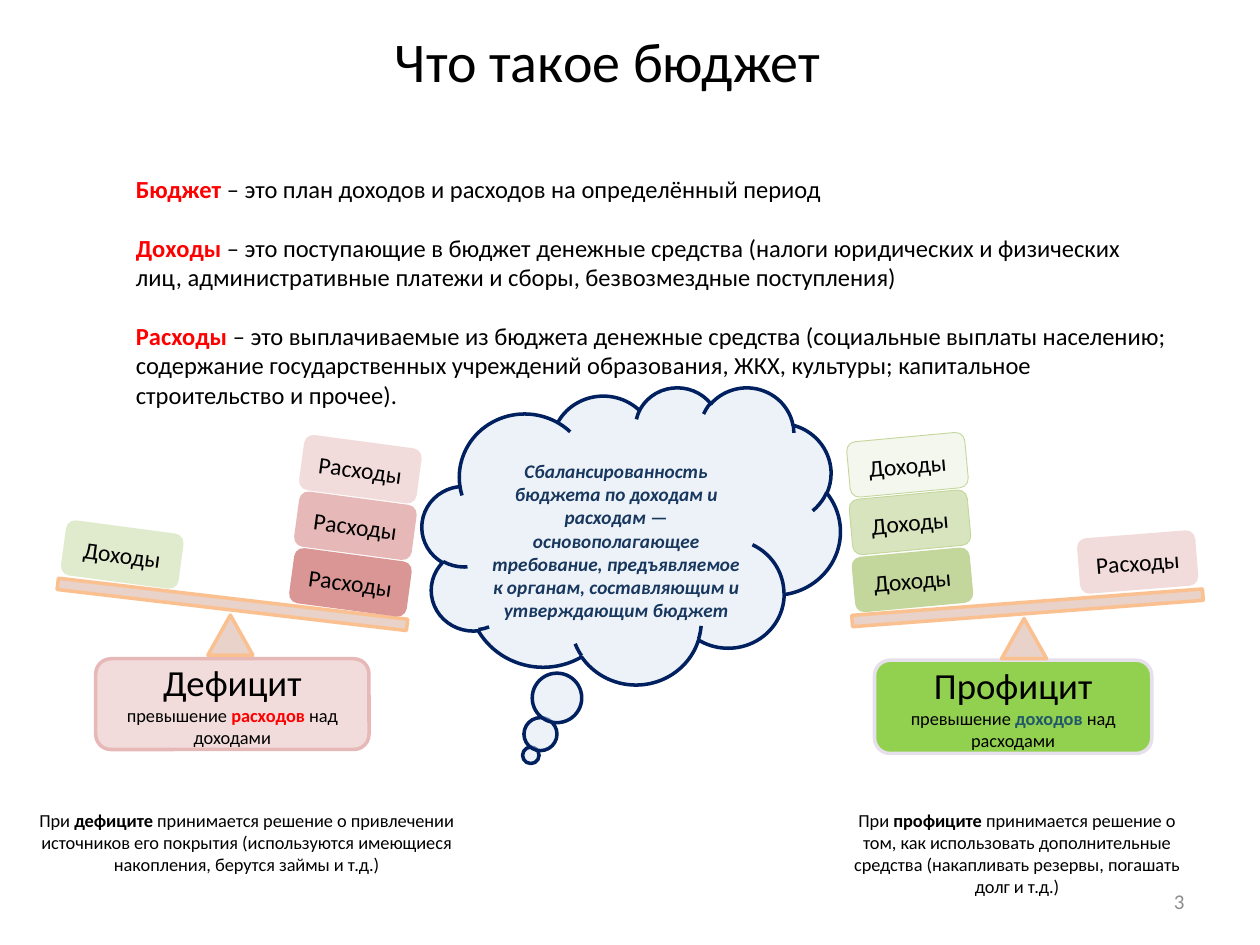
from dataclasses import dataclass
from typing import NamedTuple, Optional

from lxml.etree import SubElement
from pptx import Presentation
from pptx.dml.color import RGBColor
from pptx.enum.shapes import MSO_SHAPE as Shp
from pptx.enum.text import MSO_ANCHOR as Anchor, PP_ALIGN as Align
from pptx.oxml.ns import qn
from pptx.util import Cm, Pt


@dataclass(frozen=True)
class Theme:
    font: str = "Calibri"
    title: float = 32
    heading: float = 21
    body: float = 14
    brick: float = 13.5
    number: float = 12
    cloud: float = 11
    note: float = 10.5
    black: str = "000000"
    grey: str = "8C8C8C"
    red: str = "FF0000"
    teal: str = "215968"
    navy: str = "17375E"
    cloud_fill: str = "DCE6F2"
    cloud_line: str = "002060"
    scale_fill: str = "E9D2C9"
    scale_line: str = "FAC090"
    green: str = "C3D69B"
    light_green: str = "D7E4BD"
    pale_green: str = "EBF1DE"
    rose: str = "D99694"
    light_rose: str = "E6B9B8"
    pale_rose: str = "F2DCDB"
    lime: str = "92D050"
    lilac: str = "E6E0EC"


T = Theme()


class Box(NamedTuple):
    left: float
    top: float
    width: float
    height: float


class Run(NamedTuple):
    text: str
    size: float = T.note
    color: str = T.black
    bold: bool = False
    italic: bool = False


class Paint(NamedTuple):
    fill: str
    line: Optional[str] = None
    width: float = 2
    alpha: int = 100


class Brick(NamedTuple):
    text: str
    left: float
    top: float
    angle: float
    paint: Paint


class Balance(NamedTuple):
    bricks: list
    beam: Box
    beam_angle: float
    pivot: Box
    verdict: Box
    verdict_paint: Paint
    verdict_text: list
    note: Box
    note_text: list


def write(s, paragraphs: list, align=Align.CENTER, anchor=Anchor.MIDDLE, gap: float = 0) -> None:
    tf = s.text_frame
    for name, value in {"word_wrap": True, "vertical_anchor": anchor}.items():
        setattr(tf, name, value)
    for i, runs in enumerate(paragraphs):
        p = tf.add_paragraph() if i else tf.paragraphs[0]
        p.alignment = align
        if i and gap:
            p.space_before = Pt(gap)
        for run in runs:
            r = p.add_run()
            r.text = run.text
            style = {"name": T.font, "size": Pt(run.size), "bold": run.bold, "italic": run.italic}
            for name, value in style.items():
                setattr(r.font, name, value)
            r.font.color.rgb = RGBColor.from_string(run.color)


def draw(shapes, kind, box: Box, paint: Paint, angle: float = 0):
    s = shapes.add_shape(kind, *map(Cm, box))
    s.shadow.inherit = False
    s.rotation = angle
    s.fill.solid()
    s.fill.fore_color.rgb = RGBColor.from_string(paint.fill)
    if paint.alpha < 100:
        color = s.fill._xPr.find(qn("a:solidFill"))[0]
        SubElement(color, qn("a:alpha")).set("val", str(paint.alpha * 1000))
    if paint.line:
        s.line.color.rgb = RGBColor.from_string(paint.line)
        s.line.width = Pt(paint.width)
    else:
        s.line.fill.background()
    return s


def add_text(shapes, box: Box, paragraphs: list, **layout):
    s = shapes.add_textbox(*map(Cm, box))
    write(s, paragraphs, **{"anchor": Anchor.TOP, **layout})
    return s


def stack(text: str, left: float, top: float, dx: float, dy: float, angle: float, paints: list) -> list:
    """Bricks piled from the bottom up."""
    return [Brick(text, left + i * dx, top + i * dy, angle, paint) for i, paint in enumerate(paints)]


def draw_balance(shapes, b: Balance) -> None:
    s = draw(shapes, Shp.ROUNDED_RECTANGLE, b.verdict, b.verdict_paint)
    write(s, b.verdict_text)
    group = shapes.add_group_shape().shapes
    scale = Paint(T.scale_fill, T.scale_line)
    draw(group, Shp.FLOWCHART_EXTRACT, b.pivot, scale)
    draw(group, Shp.RECTANGLE, b.beam, scale, b.beam_angle)
    for brick in b.bricks:
        box = Box(brick.left, brick.top, 2.39, 1.12)
        s = draw(group, Shp.ROUNDED_RECTANGLE, box, brick.paint, brick.angle)
        write(s, [[Run(brick.text, T.brick)]])
    add_text(shapes, b.note, [b.note_text])


INCOME, EXPENSES = "Доходы", "Расходы"

DEFICIT = Balance(
    bricks=stack(EXPENSES, 5.87, 11.18, 0.1, -1.14, 7.6,
                 [Paint(T.rose), Paint(T.light_rose), Paint(T.light_rose, alpha=50)])
    + [Brick(INCOME, 1.27, 10.62, 7.6, Paint(T.green, alpha=50))],
    beam=Box(1.14, 12.07, 7.09, 0.23), beam_angle=6.7,
    pivot=Box(4.19, 12.4, 0.91, 0.81),
    verdict=Box(1.93, 13.28, 5.51, 1.83),
    verdict_paint=Paint(T.pale_rose, T.light_rose),
    verdict_text=[[Run("Дефицит", T.heading)],
                  [Run("превышение "), Run("расходов ", color=T.red, bold=True), Run("над доходами")]],
    note=Box(0.53, 16.18, 8.89, 2.06),
    note_text=[Run("При "), Run("дефиците", bold=True),
               Run(" принимается решение о привлечении источников его покрытия "
                   "(используются имеющиеся накопления, берутся займы и т.д.)")],
)

SURPLUS = Balance(
    bricks=stack(INCOME, 17.2, 11.13, -0.05, -1.16, 354.7,
                 [Paint(T.green), Paint(T.light_green, T.green, 0.5),
                  Paint(T.pale_green, T.green, 0.5, 50)])
    + [Brick(EXPENSES, 21.74, 10.77, 355.5, Paint(T.light_rose, alpha=50))],
    beam=Box(17.17, 12.14, 7.09, 0.23), beam_angle=355.7,
    pivot=Box(20.19, 12.47, 0.91, 0.81),
    verdict=Box(17.63, 13.31, 5.59, 1.88),
    verdict_paint=Paint(T.lime, T.lilac),
    verdict_text=[[Run("Профицит", T.heading)],
                  [Run("превышение "), Run("доходов", color=T.teal, bold=True), Run(" над расходами")]],
    note=Box(16.76, 16.18, 7.49, 2.06),
    note_text=[Run("При "), Run("профиците ", bold=True),
               Run("принимается решение о том, как использовать дополнительные средства "
                   "(накапливать резервы, погашать долг и т.д.)")],
)

DEFINITIONS = {
    "Бюджет": "план доходов и расходов на определённый период",
    INCOME: "поступающие в бюджет денежные средства (налоги юридических и физических лиц, "
            "административные платежи и сборы, безвозмездные поступления)",
    EXPENSES: "выплачиваемые из бюджета денежные средства (социальные выплаты населению; "
              "содержание государственных учреждений образования, ЖКХ, культуры; "
              "капитальное строительство и прочее).",
}

CLOUD_TEXT = ("Сбалансированность бюджета по доходам и расходам — основополагающее требование, "
              "предъявляемое к органам, составляющим и утверждающим бюджет")


def main() -> None:
    prs = Presentation()
    prs.slide_width, prs.slide_height = Cm(25.4), Cm(19.05)
    shapes = prs.slides.add_slide(prs.slide_layouts[6]).shapes

    # Title and slide number
    add_text(shapes, Box(0, 0.41, 24.51, 1.52), [[Run("Что такое бюджет", T.title)]])
    add_text(shapes, Box(18.21, 17.65, 5.92, 1.02), [[Run("3", T.number, T.grey)]],
             align=Align.RIGHT, anchor=Anchor.MIDDLE)

    # Two tilted scales with verdicts and notes
    for balance in (DEFICIT, SURPLUS):
        draw_balance(shapes, balance)

    # Cloud between the scales
    cloud = draw(shapes, Shp.CLOUD_CALLOUT, Box(8.51, 7.8, 8.43, 5.99),
                 Paint(T.cloud_fill, T.cloud_line, alpha=50))
    cloud.adjustments[0], cloud.adjustments[1] = -0.24, 0.74
    write(cloud, [[Run(CLOUD_TEXT, T.cloud, T.navy, True, True)]])
    cloud.text_frame.margin_top = Cm(0.6)

    # Definitions, one blank line's height apart
    add_text(shapes, Box(2.49, 3.38, 21.39, 5.05),
             [[Run(f"{term} ", T.body, T.red, True), Run(f"– это {meaning}", T.body)]
              for term, meaning in DEFINITIONS.items()],
             align=Align.LEFT, gap=T.body * 1.2)

    prs.save("out.pptx")


if __name__ == "__main__":
    main()
